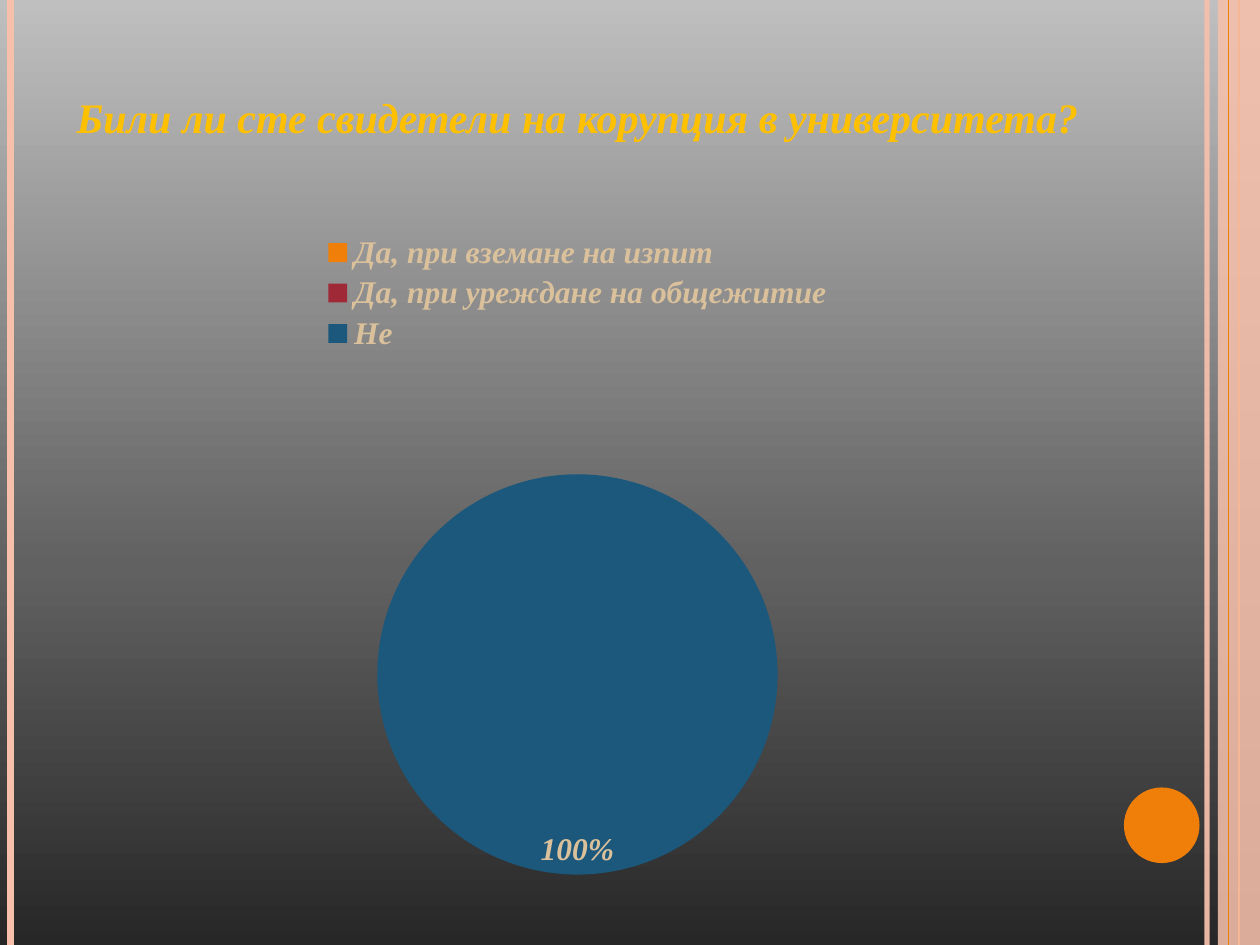
import copy

import pptx
import pptx.chart.data
import pptx.dml.color
import pptx.enum.chart
import pptx.enum.shapes
import pptx.enum.text
import pptx.oxml.ns
import pptx.oxml.xmlchemy
import pptx.util

SCALE = 914400 / 126
WIDTH, HEIGHT = 1260, 945
COLORS = {
    "night": "272727", "dusk": "616161", "mist": "BFBFBF",
    "peach": "F6C0AB", "orange": "F07F09", "red": "9F2936",
    "blue": "1B587C", "gold": "FFC000", "sand": "DAC19B",
}
SERIF = "Times New Roman"


def px(length):
    return pptx.util.Emu(round(length * SCALE))


def rgb(name):
    return pptx.dml.color.RGBColor.from_string(COLORS[name])


def make_element(tag, value=None):
    element = pptx.oxml.xmlchemy.OxmlElement(tag)
    if value is not None:
        element.set("val", str(value))
    return element


def paint(fill, name, opacity=100):
    fill.solid()
    fill.fore_color.rgb = rgb(name)
    if opacity < 100:
        color = fill._xPr.find(".//" + pptx.oxml.ns.qn("a:srgbClr"))
        color.append(make_element("a:alpha", opacity * 1000))


def style_font(font, size, name):
    font.name = SERIF
    font.size = pptx.util.Pt(size)
    font.bold = font.italic = True
    font.color.rgb = rgb(name)


def add_backdrop(slide):
    fill = slide.background.fill
    fill.gradient()
    fill.gradient_angle = 90
    first = fill.gradient_stops[0]._gs
    first.addnext(copy.deepcopy(first))
    shades = [(0, "night"), (0.4, "dusk"), (1, "mist")]
    for stop, (position, shade) in zip(fill.gradient_stops, shades):
        stop.position = position
        stop.color.rgb = rgb(shade)


def add_stripe(slide, x, top, height, color, weight, opacity=100):
    stripe = slide.shapes.add_connector(
        pptx.enum.shapes.MSO_CONNECTOR.STRAIGHT,
        px(x), px(top), px(x), px(top + height))
    stripe.line.width = pptx.util.Pt(weight)
    paint(stripe.line.fill, color, opacity)
    stripe._element.spPr.append(make_element("a:effectLst"))


def add_block(slide, preset, box, color, opacity=100):
    block = slide.shapes.add_shape(preset, *map(px, box))
    block.shadow.inherit = False
    paint(block.fill, color, opacity)
    block.line.fill.background()


def add_border(slide, left, top, width, height):
    right = left + width
    presets = pptx.enum.shapes.MSO_SHAPE
    add_stripe(slide, right - 53, top, height, "peach", 3, 93)
    add_stripe(slide, left + 10.5, top, height, "peach", 4.5)
    add_stripe(slide, right - 21, top, height, "orange", 1.5)
    add_block(slide, presets.RECTANGLE, (right - 42, top, 42, height), "peach", 87)
    add_stripe(slide, right - 31.5, top, height, "orange", 0.75)
    add_block(slide, presets.OVAL, (right - 136, top + 787.5, 75.6, 75.6), "orange")


def add_question(slide, left, top, width, height):
    question = slide.shapes.add_textbox(px(left), px(top), px(width), px(height))
    frame = question.text_frame
    frame.word_wrap = True
    frame.margin_left = frame.margin_right = 0
    frame.vertical_anchor = pptx.enum.text.MSO_ANCHOR.MIDDLE
    paragraph = frame.paragraphs[0]
    paragraph.alignment = pptx.enum.text.PP_ALIGN.CENTER
    run = paragraph.add_run()
    run.text = "Били ли сте свидетели на корупция в университета?"
    style_font(run.font, 24, "gold")


def add_answers(slide, left, top, width, height):
    answers = [
        ("Да, при вземане на изпит", 0, "orange"),
        ("Да, при уреждане на общежитие", 0, "red"),
        ("Не", 100, "blue"),
    ]
    data = pptx.chart.data.CategoryChartData()
    data.categories = [answer for answer, share, color in answers]
    data.add_series("Series 1", [share for answer, share, color in answers])
    chart = slide.shapes.add_chart(
        pptx.enum.chart.XL_CHART_TYPE.PIE,
        px(left), px(top), px(width), px(height), data).chart
    chart.has_title = False
    style_font(chart.font, 18, "sand")

    chart.has_legend = True
    chart.legend.position = pptx.enum.chart.XL_LEGEND_POSITION.TOP
    chart.legend.include_in_layout = False
    style_font(chart.legend.font, 18, "sand")

    plot = chart.plots[0]
    plot.vary_by_categories = True
    pie = plot.series[0]
    for index, (answer, share, color) in enumerate(answers):
        paint(pie.points[index].format.fill, color)
        if not share:
            label = pie.points[index].data_label._get_or_add_dLbl()
            for child in list(label)[1:]:
                label.remove(child)
            label.append(make_element("c:delete", 1))
    first_slice = pie._element.find(pptx.oxml.ns.qn("c:dPt"))
    first_slice.addprevious(make_element("c:explosion", 25))

    labels = pie.data_labels
    labels.show_percentage = True
    labels.show_value = False
    labels.number_format = "0%"
    labels.number_format_is_linked = False
    labels.position = pptx.enum.chart.XL_LABEL_POSITION.INSIDE_END
    style_font(labels.font, 18, "sand")


def main():
    presentation = pptx.Presentation()
    presentation.slide_width = px(WIDTH)
    presentation.slide_height = px(HEIGHT)
    slide = presentation.slides.add_slide(presentation.slide_layouts[6])
    add_backdrop(slide)
    add_border(slide, 0, 0, WIDTH, HEIGHT)
    add_question(slide, 63, 38, 1029, 158)
    add_answers(slide, 63, 220, 1029, 672)
    presentation.save("out.pptx")


if __name__ == "__main__":
    main()
